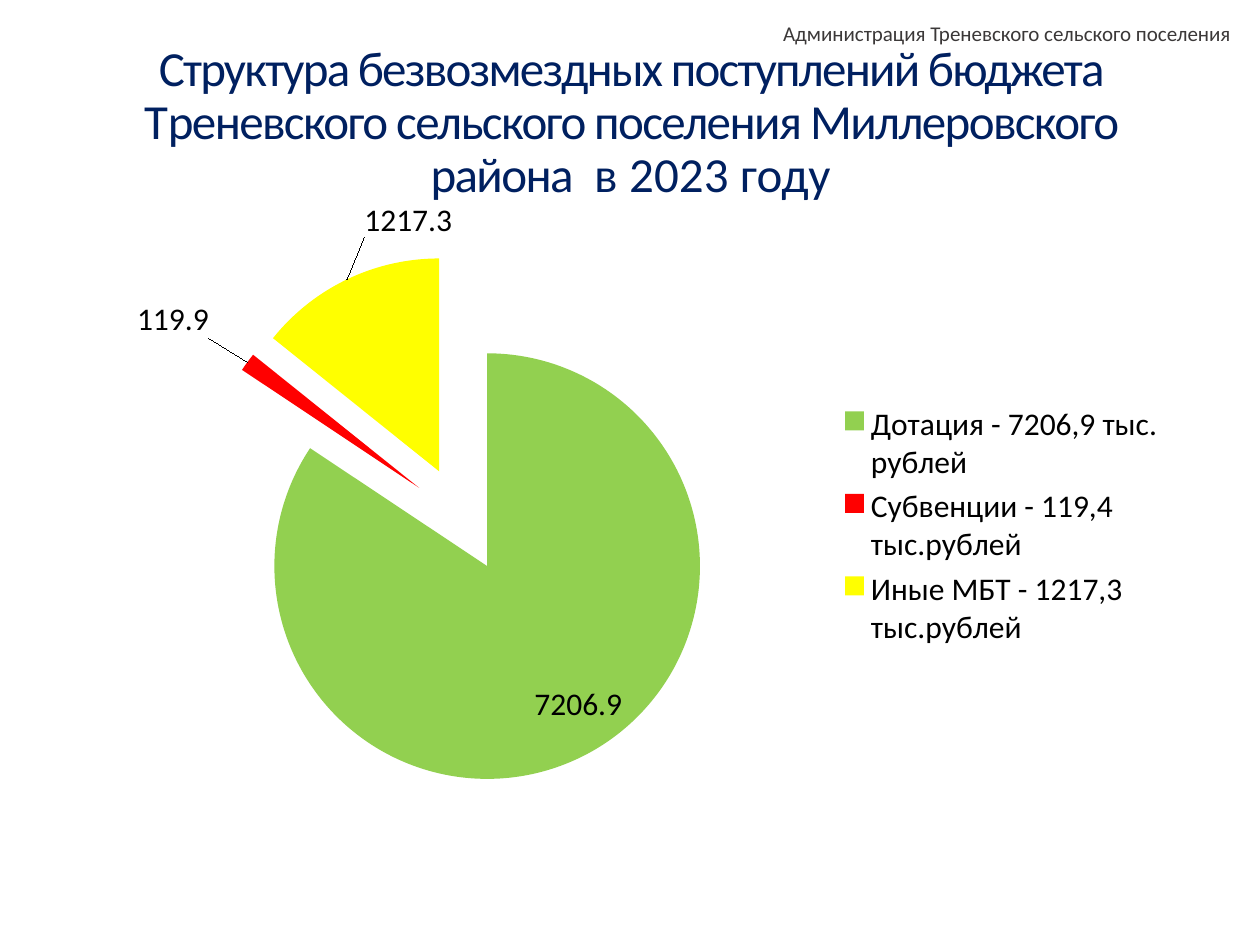
import dataclasses
from typing import Optional

import pptx
import pptx.chart.data
import pptx.dml.color
import pptx.enum.chart
import pptx.enum.text
import pptx.oxml
import pptx.oxml.ns
import pptx.util

Cm = pptx.util.Cm
Pt = pptx.util.Pt
RGBColor = pptx.dml.color.RGBColor
Align = pptx.enum.text.PP_ALIGN
LabelPosition = pptx.enum.chart.XL_LABEL_POSITION

NAVY = RGBColor(0x00, 0x20, 0x60)
GRAY = RGBColor(0x3B, 0x38, 0x38)
BLACK = RGBColor(0x00, 0x00, 0x00)
GREEN = RGBColor(0x92, 0xD0, 0x50)
RED = RGBColor(0xFF, 0x00, 0x00)
YELLOW = RGBColor(0xFF, 0xFF, 0x00)
FONT = "Calibri"


@dataclasses.dataclass
class Slice:
    name: str
    value: float
    color: RGBColor
    label_shift: Optional[tuple[float, float]] = None  # share of chart size


SLICES = [
    Slice("Дотация - 7206,9 тыс. рублей", 7206.9, GREEN),
    Slice("Субвенции - 119,4 тыс.рублей", 119.9, RED, (-0.03, -0.03)),
    Slice("Иные МБТ - 1217,3 тыс.рублей", 1217.3, YELLOW, (0.1, -0.055)),
]
# Title text with letter spacing in hundredths of a point
TITLE_SPANS = [
    ("Структура безвозмездных поступлений бюджета Т", -100),
    ("реневского сельского поселения Миллеровского района ", -90),
    (" в 2023 году", 10),
]


def set_font(font: pptx.text.text.Font, size: float, color: RGBColor) -> None:
    font.name = FONT
    font.size = Pt(size)
    font.color.rgb = color


def chart_xml(tag: str, content: str):
    namespace = pptx.oxml.ns.nsdecls("c")
    return pptx.oxml.parse_xml(f"<c:{tag} {namespace} {content}</c:{tag}>")


def manual_layout(x: float, y: float, extra: str = "", target: str = ""):
    return chart_xml(
        "layout",
        f'><c:manualLayout>{target}<c:x val="{x}"/><c:y val="{y}"/>{extra}</c:manualLayout>',
    )


def add_title(page) -> None:
    title = page.shapes.title
    title.left, title.top = Cm(1.83), Cm(1.14)
    title.width, title.height = Cm(21.77), Cm(2.72)
    frame = title.text_frame
    frame.auto_size = pptx.enum.text.MSO_AUTO_SIZE.NONE
    frame.vertical_anchor = pptx.enum.text.MSO_ANCHOR.MIDDLE
    para = frame.paragraphs[0]
    para.alignment = Align.CENTER
    para.line_spacing = 0.9
    set_font(para.font, 28, NAVY)
    for text, spacing in TITLE_SPANS:
        span = para.add_run()
        span.text = text
        set_font(span.font, 28, NAVY)
        span.font._element.set("spc", str(spacing))


def add_header(page) -> None:
    box = page.shapes.add_textbox(Cm(8.99), Cm(0.36), Cm(16.08), Cm(0.61))
    frame = box.text_frame
    frame.word_wrap = True
    frame.vertical_anchor = pptx.enum.text.MSO_ANCHOR.MIDDLE
    para = frame.paragraphs[0]
    para.text = "Администрация Треневского сельского поселения"
    para.alignment = Align.RIGHT
    set_font(para.font, 12, GRAY)


def add_pie(page, slices: list[Slice]) -> None:
    data = pptx.chart.data.CategoryChartData()
    data.categories = [part.name for part in slices]
    data.add_series("Series 1", [part.value for part in slices])
    chart = page.shapes.add_chart(
        pptx.enum.chart.XL_CHART_TYPE.PIE,
        Cm(1.88), Cm(4.06), Cm(21.87), Cm(13.08), data,
    ).chart
    set_font(chart.font, 18, BLACK)
    chart.has_title = False
    chart.has_legend = True
    chart.legend.position = pptx.enum.chart.XL_LEGEND_POSITION.RIGHT
    chart.legend.include_in_layout = False

    # Plot area
    plot = chart.plots[0]
    plot.vary_by_categories = True
    area = plot._element.getparent()
    for old in area.findall(pptx.oxml.ns.qn("c:layout")):
        area.remove(old)
    area.insert(0, manual_layout(
        0.06, 0.08, '<c:w val="0.56"/><c:h val="0.82"/>',
        '<c:layoutTarget val="inner"/><c:xMode val="edge"/><c:yMode val="edge"/>',
    ))

    # Slices and their value labels
    series = plot.series[0]
    labels = series.data_labels
    labels.show_value = True
    labels.position = LabelPosition.BEST_FIT
    set_font(labels.font, 18, BLACK)
    for index, part in enumerate(slices):
        point = series.points[index]
        point.format.fill.solid()
        point.format.fill.fore_color.rgb = part.color
        if part.label_shift:
            label = point.data_label
            label.position = LabelPosition.OUTSIDE_END
            set_font(label.font, 18, BLACK)
            entry = labels._element.findall(pptx.oxml.ns.qn("c:dLbl"))[-1]
            entry.insert(1, manual_layout(*part.label_shift))
    first_point = series._element.find(pptx.oxml.ns.qn("c:dPt"))
    first_point.addprevious(chart_xml("explosion", 'val="25">'))


def main() -> None:
    deck = pptx.Presentation()
    deck.slide_width, deck.slide_height = Cm(25.4), Cm(19.05)
    page = deck.slides.add_slide(deck.slide_layouts.get_by_name("Title Only"))
    add_title(page)
    add_pie(page, SLICES)
    add_header(page)
    deck.save("out.pptx")


if __name__ == "__main__":
    main()
